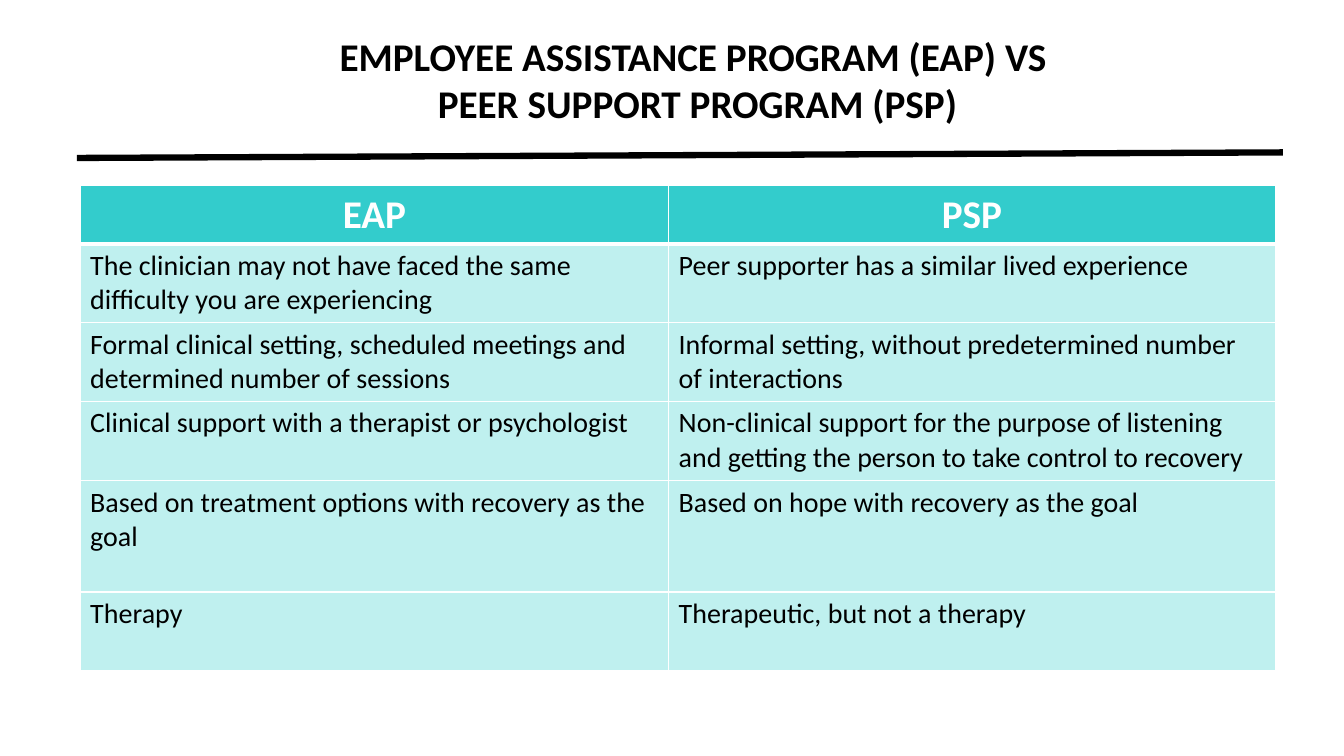
import pptx
import pptx.dml.color
import pptx.enum.shapes
import pptx.enum.text
import pptx.oxml
import pptx.oxml.ns
import pptx.util
from pptx.util import Cm

BLACK = pptx.dml.color.RGBColor(0x00, 0x00, 0x00)
WHITE = pptx.dml.color.RGBColor(0xFF, 0xFF, 0xFF)
TEAL = pptx.dml.color.RGBColor(0x33, 0xCC, 0xCC)
PALE_TEAL = pptx.dml.color.RGBColor(0xBF, 0xF0, 0xEF)
CENTER = pptx.enum.text.PP_ALIGN.CENTER
LEFT = pptx.enum.text.PP_ALIGN.LEFT

TITLE_LINES = ["EMPLOYEE ASSISTANCE PROGRAM (EAP) VS ", "PEER SUPPORT PROGRAM (PSP)"]
COMPARISON = [
    ("EAP", "PSP"),
    ("The clinician may not have faced the same difficulty you are experiencing",
     "Peer supporter has a similar lived experience"),
    ("Formal clinical setting, scheduled meetings and determined number of sessions",
     "Informal setting, without predetermined number of interactions"),
    ("Clinical support with a therapist or psychologist",
     "Non-clinical support for the purpose of listening and getting the person "
     "to take control to recovery"),
    ("Based on treatment options with recovery as the goal",
     "Based on hope with recovery as the goal"),
    ("Therapy", "Therapeutic, but not a therapy"),
]
COLUMN_WIDTHS = [14.83, 15.29]
ROW_HEIGHTS = [1.42, 1.96, 1.96, 2.01, 2.8, 1.98]


def add_text(paragraph, text, size, color, bold, alignment):
    paragraph.alignment = alignment
    run = paragraph.add_run()
    run.text = text
    run.font.name = "Calibri"
    run.font.size = pptx.util.Pt(size)
    run.font.bold = bold
    run.font.color.rgb = color


def set_border(cell, side, points):
    border = pptx.oxml.parse_xml(
        f'<a:{side} {pptx.oxml.ns.nsdecls("a")} w="{pptx.util.Pt(points)}">'
        f'<a:solidFill><a:srgbClr val="{WHITE}"/></a:solidFill></a:{side}>')
    cell._tc.get_or_add_tcPr().append(border)


presentation = pptx.Presentation()
presentation.slide_width = Cm(33.87)
presentation.slide_height = Cm(19.05)
slide = presentation.slides.add_slide(presentation.slide_layouts.get_by_name("Title Only"))

# Title
title = slide.shapes.title
title.left, title.top, title.width, title.height = Cm(2.54), Cm(0.69), Cm(30.07), Cm(2.64)
title_frame = title.text_frame
title_frame.word_wrap = True
title_frame.auto_size = pptx.enum.text.MSO_AUTO_SIZE.NONE
title_frame.vertical_anchor = pptx.enum.text.MSO_ANCHOR.TOP
for index, line in enumerate(TITLE_LINES):
    paragraph = title_frame.add_paragraph() if index else title_frame.paragraphs[0]
    paragraph.line_spacing = 1.0
    add_text(paragraph, line, 28, BLACK, True, CENTER)

# Comparison table
table = slide.shapes.add_table(
    len(COMPARISON), len(COLUMN_WIDTHS), Cm(2.02), Cm(4.68),
    Cm(sum(COLUMN_WIDTHS)), Cm(sum(ROW_HEIGHTS))).table
table.horz_banding = False
for column, width in zip(table.columns, COLUMN_WIDTHS):
    column.width = Cm(width)
for row_index, (row, height) in enumerate(zip(table.rows, ROW_HEIGHTS)):
    row.height = Cm(height)
    is_header = row_index == 0
    for cell, text in zip(row.cells, COMPARISON[row_index]):
        for side in ("lnL", "lnR", "lnT", "lnB"):
            below_header = (is_header and side == "lnB") or (row_index == 1 and side == "lnT")
            set_border(cell, side, 3 if below_header else 1)
        cell.fill.solid()
        cell.fill.fore_color.rgb = TEAL if is_header else PALE_TEAL
        paragraph = cell.text_frame.paragraphs[0]
        if is_header:
            add_text(paragraph, text, 28, WHITE, True, CENTER)
        else:
            add_text(paragraph, text, 20, BLACK, False, LEFT)

# Rule under the title
rule = slide.shapes.add_connector(
    pptx.enum.shapes.MSO_CONNECTOR.STRAIGHT, Cm(1.94), Cm(3.98), Cm(32.33), Cm(3.84))
rule.line.color.rgb = BLACK
rule.line.width = pptx.util.Pt(4.5)
rule._element.spPr.append(
    pptx.oxml.parse_xml(f'<a:effectLst {pptx.oxml.ns.nsdecls("a")}/>'))

presentation.save("out.pptx")
